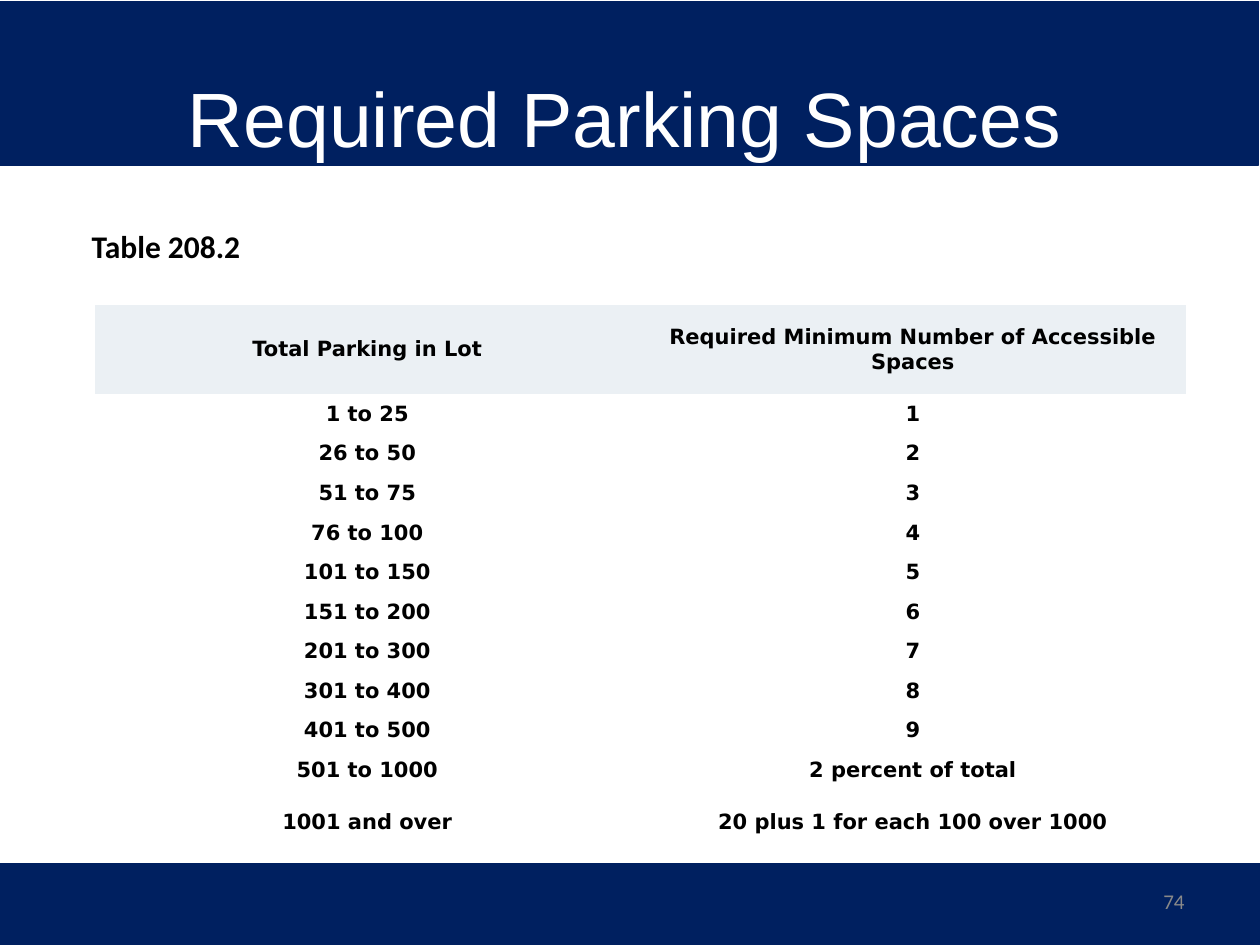
from pptx import Presentation
from pptx.dml.color import RGBColor
from pptx.enum.shapes import MSO_SHAPE as Shape
from pptx.enum.text import MSO_ANCHOR as Anchor, PP_ALIGN as Align
from pptx.oxml.ns import qn
from pptx.util import Inches, Pt

COLORS = {"navy": "002060", "white": "FFFFFF", "black": "000000",
          "head": "EBF0F4", "gray": "898989"}
NO_GRID = "{2D5ABB26-0587-4C30-8999-92F81FD0307C}"
TITLE = {"name": "Arial", "size": Pt(44)}
LABEL = {"name": "Calibri", "size": Pt(18), "bold": True}
CELL = {"name": "DejaVu Sans", "size": Pt(12), "bold": True}
NUMBER = {"name": "Calibri", "size": Pt(12)}
ROWS = [
    ("Total Parking in Lot", "Required Minimum Number of Accessible Spaces"),
    ("1 to 25", "1"),
    ("26 to 50", "2"),
    ("51 to 75", "3"),
    ("76 to 100", "4"),
    ("101 to 150", "5"),
    ("151 to 200", "6"),
    ("201 to 300", "7"),
    ("301 to 400", "8"),
    ("401 to 500", "9"),
    ("501 to 1000", "2 percent of total"),
    ("1001 and over", "20 plus 1 for each 100 over 1000"),
]
HEIGHTS = [0.71] + [0.314] * 10 + [0.51]


def rgb(name):
    return RGBColor.from_string(COLORS[name])


def box(*sizes):
    return [Inches(size) for size in sizes]


def write(frame, text, style, color, align):
    frame.text = text
    line = frame.paragraphs[0]
    line.alignment = align
    for key, value in style.items():
        setattr(line.font, key, value)
    line.font.color.rgb = rgb(color)


def add_band(slide, place, weight):
    band = slide.shapes.add_shape(Shape.RECTANGLE, *box(*place))
    band.shadow.inherit = False
    band.fill.solid()
    band.fill.fore_color.rgb = rgb("navy")
    band.line.color.rgb = rgb("navy")
    band.line.width = Pt(weight)


def set_title(slide, text):
    """Fill the title and bring it in front of the bands."""
    title = slide.shapes.title
    title.left, title.top, title.width, title.height = box(0, 0.3, 9.92, 1.25)
    title.text_frame.vertical_anchor = Anchor.MIDDLE
    write(title.text_frame, text, TITLE, "white", Align.CENTER)
    slide.shapes._spTree.append(title._element)


def add_text(slide, place, text, style, color, align, anchor):
    frame = slide.shapes.add_textbox(*box(*place)).text_frame
    frame.word_wrap = True
    frame.vertical_anchor = anchor
    write(frame, text, style, color, align)


def add_table(slide):
    place = box(0.75, 2.42, 8.66, sum(HEIGHTS))
    table = slide.shapes.add_table(len(ROWS), 2, *place).table
    table.horz_banding = False
    table._tbl.tblPr.find(qn("a:tableStyleId")).text = NO_GRID
    for r, (texts, height) in enumerate(zip(ROWS, HEIGHTS)):
        table.rows[r].height = Inches(height)
        for c, text in enumerate(texts):
            cell = table.cell(r, c)
            cell.vertical_anchor = Anchor.MIDDLE
            write(cell.text_frame, text, CELL, "black", Align.CENTER)
            if r == 0:
                cell.fill.solid()
                cell.fill.fore_color.rgb = rgb("head")
            else:
                cell.fill.background()


def main():
    deck = Presentation()
    deck.slide_width, deck.slide_height = box(10, 7.5)
    slide = deck.slides.add_slide(deck.slide_layouts[5])
    add_band(slide, (-0.01, 0.01, 10, 1.3), 0.75)
    add_band(slide, (0, 6.86, 10, 0.64), 2)
    set_title(slide, "Required Parking Spaces")
    add_text(slide, (0.63, 1.75, 9, 0.4), "Table 208.2",
             LABEL, "black", Align.LEFT, Anchor.TOP)
    add_table(slide)
    add_text(slide, (7.17, 6.95, 2.33, 0.4), "74",
             NUMBER, "gray", Align.RIGHT, Anchor.MIDDLE)
    deck.save("out.pptx")


if __name__ == "__main__":
    main()
